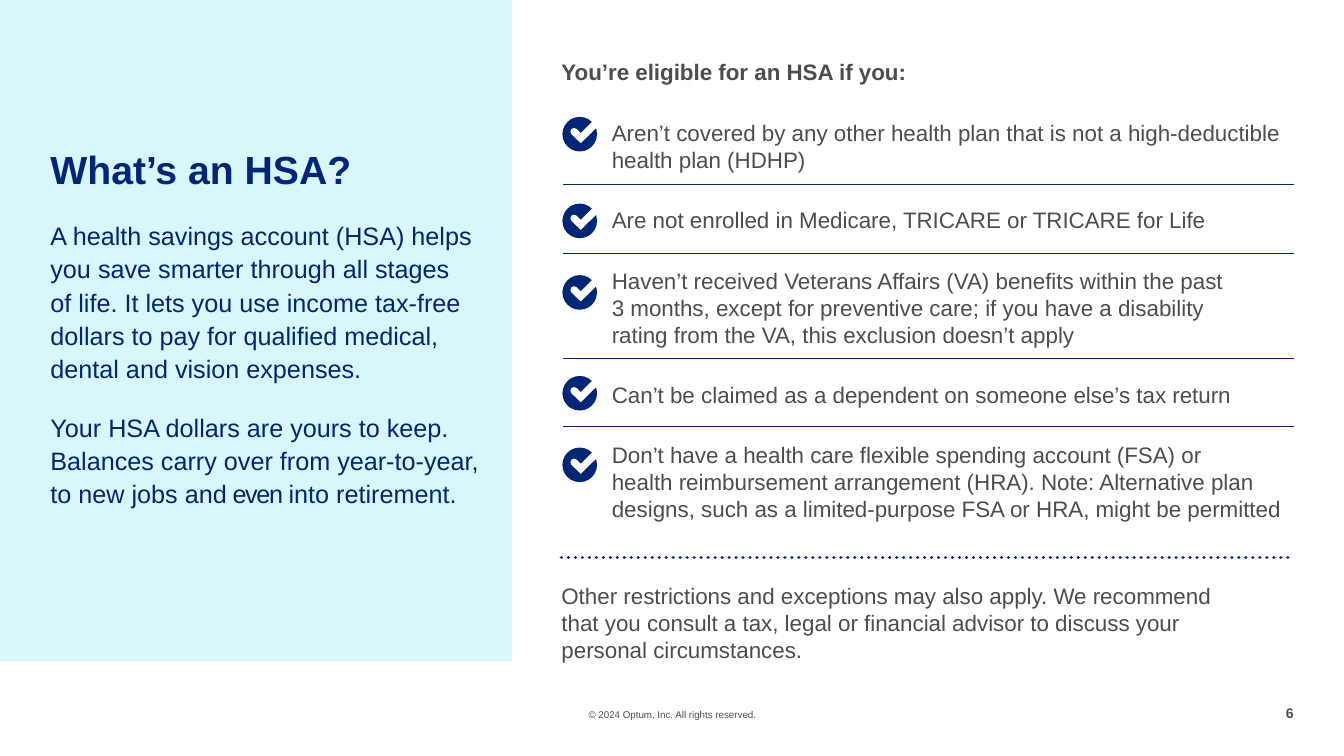
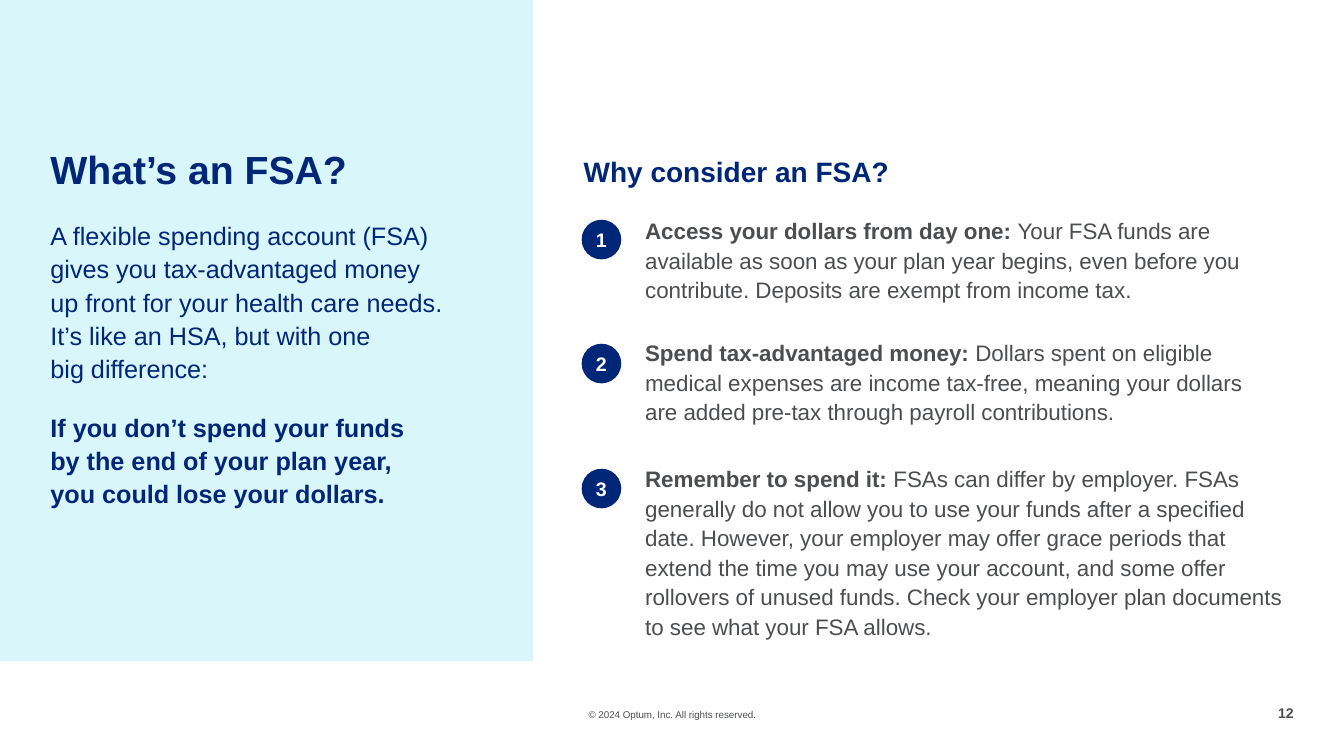
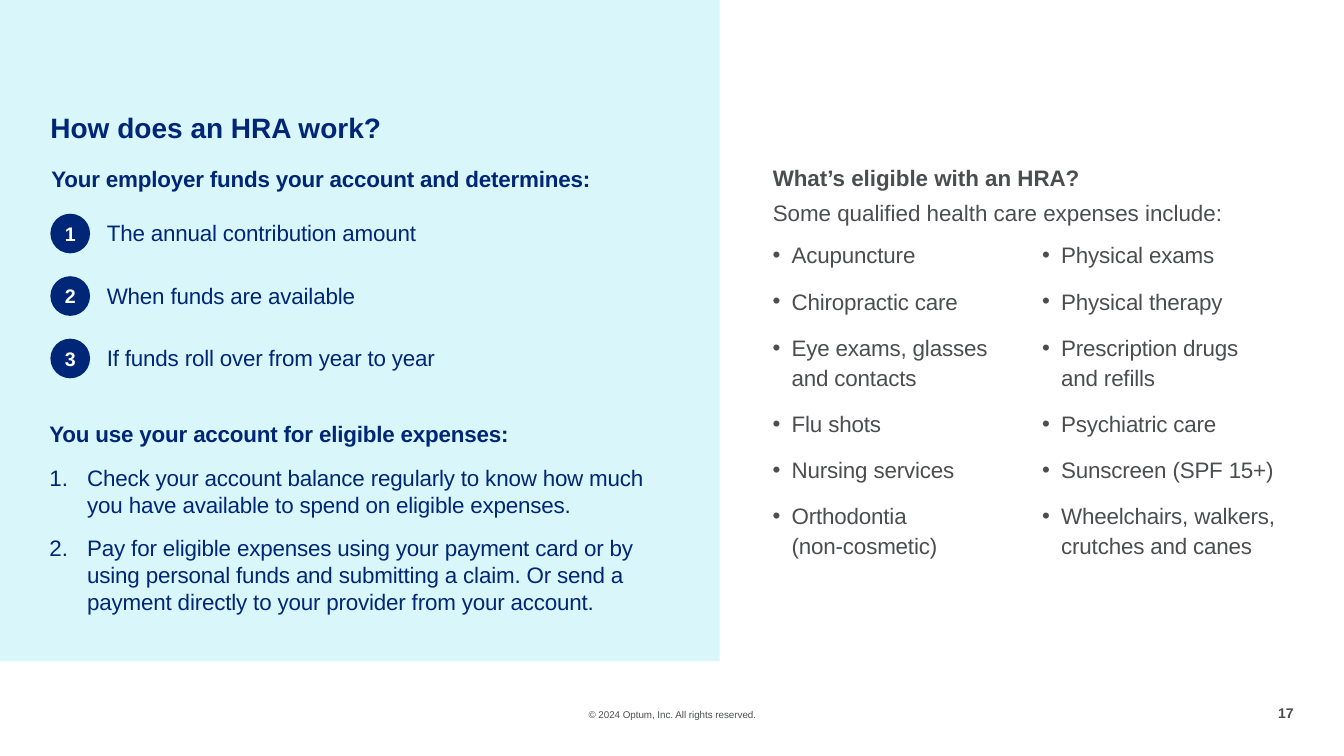
"""Build three slides that explain HSA, FSA and HRA accounts."""
from copy import deepcopy

from lxml.etree import SubElement
from pptx import Presentation
from pptx.dml.color import RGBColor
from pptx.enum.dml import MSO_LINE
from pptx.enum.shapes import MSO_CONNECTOR, MSO_SHAPE
from pptx.enum.text import MSO_ANCHOR, PP_ALIGN
from pptx.oxml.ns import qn
from pptx.util import Inches, Pt

NAVY = RGBColor(0x00, 0x26, 0x77)
GRAY = RGBColor(0x4B, 0x4D, 0x4F)
AQUA = RGBColor(0xD9, 0xF6, 0xFA)
WHITE = RGBColor(0xFF, 0xFF, 0xFF)
FONT = "Arial"
COLUMNS, ROWS = 80, 45
RIGHT_EDGE = 77
PANEL_ROWS = 39.36
BADGE = 2.36
CHECK_DISC = 2.06
CHECK_OUTLINE = [(106, 9), (99, 6), (91, 9), (53, 47), (41, 35), (34, 32),
                 (26, 35), (23, 43), (26, 50), (53, 76), (106, 24), (109, 16)]
TIGHT = -0.1


def grid(units):
    """Turn grid columns or rows into a length."""
    return round(Inches(7.5) / ROWS * units)


class Deck:
    """Hold the shared style and the slide being filled."""

    def __init__(self):
        """Open an empty deck on the grid."""
        self.presentation = Presentation()
        self.presentation.slide_width = grid(COLUMNS)
        self.presentation.slide_height = grid(ROWS)
        self.slide = None

    def new_slide(self, page, panel_columns):
        """Start a slide with its side panel and footer."""
        blank = self.presentation.slide_layouts[6]
        self.slide = self.presentation.slides.add_slide(blank)
        self.shape(MSO_SHAPE.RECTANGLE, 0, 0, panel_columns, PANEL_ROWS, AQUA)
        copyright_line = self.text_box(30.84, 42.18, 18.36, 0.72)
        self.paragraph(copyright_line, [("© 2024 Optum, Inc. All rights reserved.",)],
                       7, align=PP_ALIGN.CENTER)
        page_number = self.text_box(RIGHT_EDGE - 3, 41.94, 3, 1)
        self.paragraph(page_number, [(page, True)], 10, align=PP_ALIGN.RIGHT)

    def shape(self, preset, left, top, width, height, fill):
        """Add a flat filled preset shape."""
        shape = self.slide.shapes.add_shape(
            preset, grid(left), grid(top), grid(width), grid(height))
        self.flatten(shape, fill)
        return shape

    def flatten(self, shape, fill):
        """Give a shape a plain fill without line or shadow."""
        shape.shadow.inherit = False
        shape.fill.solid()
        shape.fill.fore_color.rgb = fill
        shape.line.fill.background()

    def prepare(self, frame, anchor):
        """Set wrapping, anchor and zero margins of a text frame."""
        frame.word_wrap = True
        frame.vertical_anchor = anchor
        frame.margin_left = frame.margin_right = 0
        frame.margin_top = frame.margin_bottom = 0
        return frame

    def text_box(self, left, top, width, height, anchor=MSO_ANCHOR.TOP):
        """Add an empty text box and return its frame."""
        box = self.slide.shapes.add_textbox(
            grid(left), grid(top), grid(width), grid(height))
        return self.prepare(box.text_frame, anchor)

    def paragraph(self, frame, runs, size, color=GRAY, before=0, spacing=None,
                  indent=0, hanging=0, bullet=None, align=PP_ALIGN.LEFT):
        """Add a paragraph of (text, bold, tracking) runs."""
        paragraph = frame.paragraphs[0]
        if paragraph.runs:
            paragraph = frame.add_paragraph()
            paragraph.space_before = Pt(before)
        paragraph.alignment = align
        if spacing:
            paragraph.line_spacing = spacing
        if indent:
            properties = paragraph._p.get_or_add_pPr()
            properties.set("marL", str(grid(indent)))
            properties.set("indent", str(-grid(hanging)))
            if bullet == "1.":
                SubElement(properties, qn("a:buFont"), typeface="+mj-lt")
                SubElement(properties, qn("a:buAutoNum"), type="arabicPeriod")
            elif bullet:
                SubElement(properties, qn("a:buFont"), typeface=FONT)
                SubElement(properties, qn("a:buChar"), char=bullet)
        for words, *style in runs:
            self.run(paragraph, words, size, color, *style)

    def run(self, paragraph, words, size, color, bold=False, tracking=0):
        """Add a run, with line breaks that keep its style."""
        for number, line in enumerate(words.split("\n")):
            if number:
                paragraph.add_line_break()
                paragraph._p[-1].append(deepcopy(run._r.rPr))
            run = paragraph.add_run()
            run.text = line
            run.font.name = FONT
            run.font.size = Pt(size)
            run.font.bold = bold
            run.font.color.rgb = color
            if tracking:
                run._r.rPr.set("spc", str(round(tracking * 100)))

    def side_text(self, width, title, *bodies):
        """Add the panel's large title and its body paragraphs."""
        frame = self.text_box(3, 8.64, width, 30.66)
        self.paragraph(frame, [(title, True)], 28, NAVY)
        for runs in bodies:
            self.paragraph(frame, runs, 18, NAVY, before=18, spacing=1.1)

    def badge(self, left, top, number):
        """Add a numbered disc."""
        disc = self.shape(MSO_SHAPE.OVAL, left, top, BADGE, BADGE, NAVY)
        frame = self.prepare(disc.text_frame, MSO_ANCHOR.MIDDLE)
        self.paragraph(frame, [(str(number), True)], 14, WHITE, align=PP_ALIGN.CENTER)

    def check(self, left, top):
        """Add a disc with a check mark."""
        self.shape(MSO_SHAPE.OVAL, left, top, CHECK_DISC, CHECK_DISC, NAVY)
        start, *others = CHECK_OUTLINE
        outline = self.slide.shapes.build_freeform(*start, scale=grid(CHECK_DISC) / 100)
        outline.add_line_segments(others, close=True)
        self.flatten(outline.convert_to_shape(grid(left), grid(top)), WHITE)

    def rule(self, left, top, weight=0.75, dotted=False):
        """Add a horizontal line up to the right edge."""
        rule = self.slide.shapes.add_connector(
            MSO_CONNECTOR.STRAIGHT, grid(left), grid(top), grid(RIGHT_EDGE), grid(top))
        rule.line.color.rgb = NAVY
        rule.line.width = Pt(weight)
        properties = rule._element.spPr
        if dotted:
            rule.line.dash_style = MSO_LINE.ROUND_DOT
            properties.find(qn("a:ln")).set("cap", "rnd")
        SubElement(properties, qn("a:effectLst"))


def hsa_slide(deck):
    """Explain the HSA and who is eligible."""
    deck.new_slide("6", 30.48)
    deck.side_text(
        25.92, "What’s an HSA?",
        [("A health savings account (HSA) helps you save smarter through all stages\n"
          "of life. It lets you use income tax-free dollars to pay for qualified medical, "
          "dental and vision expenses.",)],
        [("Your HSA dollars are yours to keep. Balances carry over from year-to-year, "
          "to new jobs and",), (" even ", False, -1), ("into retirement.",)])
    conditions = [
        (6.96, "Aren’t covered by any other health plan that is not a high-deductible "
               "health plan (HDHP)"),
        (12.12, "Are not enrolled in Medicare, TRICARE or TRICARE for Life"),
        (16.38, "Haven’t received Veterans Affairs (VA) benefits within the past\n"
                "3 months, except for preventive care; if you have a disability\n"
                "rating from the VA, this exclusion doesn’t apply"),
        (22.38, "Can’t be claimed as a dependent on someone else’s tax return"),
        (26.64, "Don’t have a health care flexible spending account (FSA) or\n"
                "health reimbursement arrangement (HRA). Note: Alternative plan\n"
                "designs, such as a limited-purpose FSA or HRA, might be permitted"),
    ]
    eligibility = deck.text_box(33.42, 3.6, 43.56, 35.76, MSO_ANCHOR.MIDDLE)
    deck.paragraph(eligibility, [("You’re eligible for an HSA if you:", True)], 16)
    for check_row, condition in conditions:
        deck.paragraph(eligibility, [(condition,)], 16, before=24, indent=3)
        deck.check(33.48, check_row)
    deck.paragraph(eligibility, [(
        "Other restrictions and exceptions may also apply. We recommend\n"
        "that you consult a tax, legal or financial advisor to discuss your\n"
        "personal circumstances.",)], 16, before=43)
    for divider_row in (10.98, 15.12, 21.36, 25.38):
        deck.rule(33.54, divider_row)
    deck.rule(33.42, 33.18, weight=2.5, dotted=True)


def fsa_slide(deck):
    """Explain the FSA and why to consider it."""
    deck.new_slide("12", 31.74)
    deck.side_text(
        25.5, "What’s an FSA?",
        [("A flexible spending account (FSA) gives you tax-advantaged money\n"
          "up front for your health care needs. It’s like an HSA, but with one\n"
          "big difference:",)],
        [("If you don’t spend your funds\nby the end of your plan year,\n"
          "you could lose your dollars.", True)])
    heading = deck.text_box(34.74, 9.42, 29.28, 2)
    deck.paragraph(heading, [("Why consider an FSA?", True)], 20, NAVY, spacing=0.9)
    reasons = [
        (13.08, 12.78, 5.22, "Access your dollars from day one: ",
         "Your FSA funds are available as soon as your plan year begins, even before you "
         "contribute. Deposits are exempt from income tax."),
        (20.46, 20.04, 5.52, "Spend tax-advantaged money: ",
         "Dollars spent on eligible medical expenses are income tax-free, meaning your "
         "dollars\nare added pre-tax through payroll contributions."),
        (27.9, 27.54, 10.62, "Remember to spend it: ",
         "FSAs can differ by employer. FSAs generally do not allow you to use your funds "
         "after a specified date. However, your employer may offer grace periods that "
         "extend the time you may use your account, and some offer rollovers of unused "
         "funds. Check your employer plan documents to see what your FSA allows."),
    ]
    for number, (badge_row, row, height, lead, detail) in enumerate(reasons, 1):
        deck.badge(34.62, badge_row, number)
        reason = deck.text_box(38.4, row, RIGHT_EDGE - 38.4, height)
        deck.paragraph(reason, [(lead, True), (detail,)], 16, spacing=1.1)


def hra_slide(deck):
    """Explain how the HRA works and what it covers."""
    deck.new_slide("17", 42.84)
    heading = deck.text_box(3, 6.6, 37.08, 2.16)
    deck.paragraph(heading, [("How does an HRA work?", True)], 20, NAVY)
    employer = deck.text_box(3.06, 9.84, 32.94, 1.68)
    deck.paragraph(employer, [("Your employer funds your account and determines:",
                               True, TIGHT)], 16, NAVY)
    decisions = ["The annual contribution amount", "When funds are available",
                 "If funds roll over from year to year"]
    for index, decision in enumerate(decisions):
        row = 12.72 + 3.72 * index
        deck.badge(3, row, index + 1)
        label = deck.text_box(6.36, row + 0.18, 28.68, 1.92, MSO_ANCHOR.MIDDLE)
        deck.paragraph(label, [(decision, False, TIGHT)], 16, NAVY)

    usage = deck.text_box(2.94, 25.02, 37.08, 12.3)
    deck.paragraph(usage, [("You use your account for eligible expenses:",
                            True, TIGHT)], 16, NAVY)
    steps = [
        "Check your account balance regularly to know how much you have available to "
        "spend on eligible expenses.",
        "Pay for eligible expenses using your payment card or by using personal funds and "
        "submitting a claim. Or send a payment directly to your provider from your account.",
    ]
    for step in steps:
        deck.paragraph(usage, [(step, False, TIGHT)], 16, NAVY, before=12,
                       indent=2.25, hanging=2.25, bullet="1.")

    eligible = deck.text_box(46, 9.78, 28.74, 3.84)
    deck.paragraph(eligible, [("What’s eligible with an HRA?", True)], 16)
    deck.paragraph(eligible, [("Some qualified health care expenses include:",)],
                   16, before=6)
    expenses = [
        (46, ["Acupuncture", "Chiropractic care", "Eye exams, glasses\nand contacts",
              "Flu shots", "Nursing services", "Orthodontia\n(non-cosmetic)"]),
        (62.04, ["Physical exams", "Physical therapy", "Prescription drugs\nand refills",
                 "Psychiatric care", "Sunscreen (SPF 15+)",
                 "Wheelchairs, walkers, crutches and canes"]),
    ]
    for column, names in expenses:
        listing = deck.text_box(column, 14.22, 15.18, 19.2)
        for name in names:
            deck.paragraph(listing, [(name, False, TIGHT)], 16, before=12, spacing=1.1,
                           indent=1.13, hanging=1.13, bullet="•")


def main():
    """Build and save the deck."""
    deck = Deck()
    for build in (hsa_slide, fsa_slide, hra_slide):
        build(deck)
    deck.presentation.save("out.pptx")


if __name__ == "__main__":
    main()
